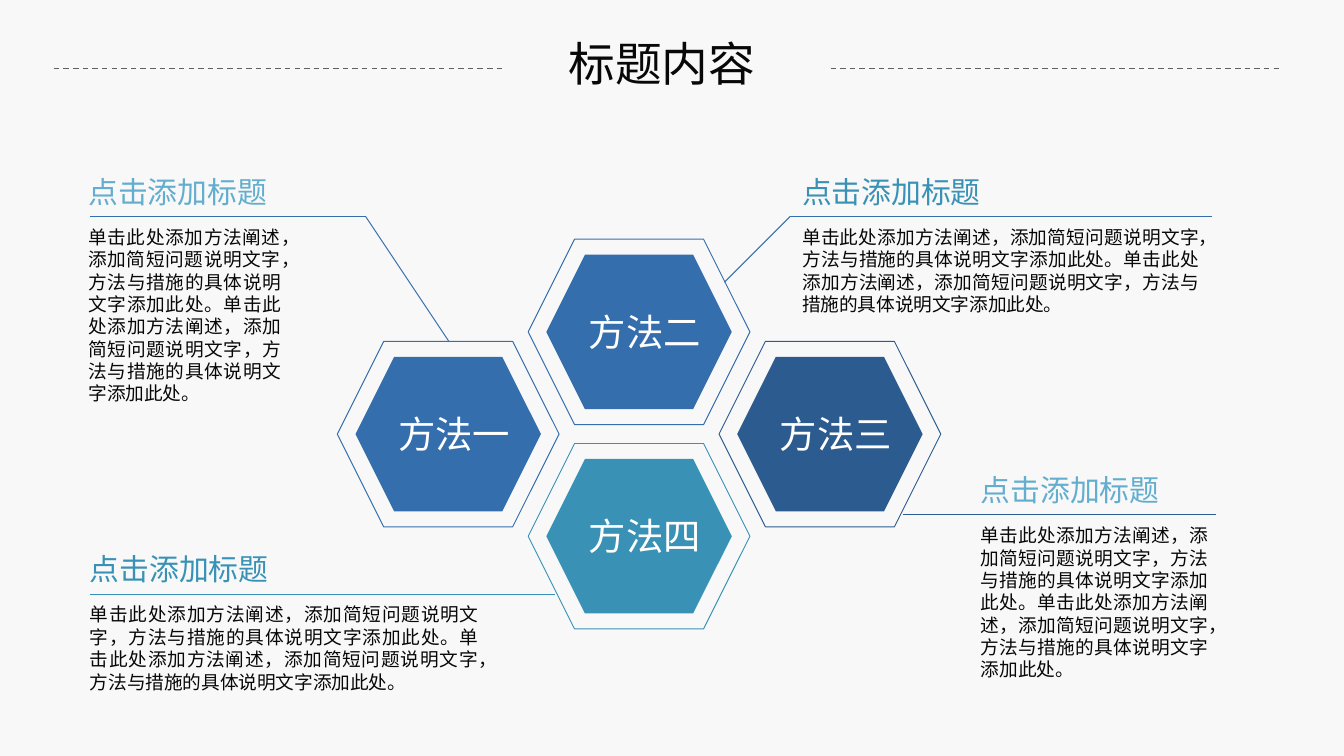
import pptx
import pptx.util
import pptx.dml.color
import pptx.enum.dml
import pptx.enum.shapes
import pptx.enum.text
import pptx.oxml
import pptx.oxml.ns

Inches, Pt = pptx.util.Inches, pptx.util.Pt
ALIGN = pptx.enum.text.PP_ALIGN
FONT = "Noto Sans CJK SC"
INK, DASH_GREY = "080808", "5F5F5F"
BLUE, NAVY, TEAL, SKY = "356EAD", "2C5B8F", "3992B5", "63AECE"


def paint(color_format, hex_color):
    """Colour a fill, a line or a font."""
    if hasattr(color_format, "solid"):
        color_format.solid()
        color_format = color_format.fore_color
    color_format.rgb = pptx.dml.color.RGBColor.from_string(hex_color)


def write(box, text, size, color, align, wrap=True):
    """Fill a box with one paragraph set on lines of 1.2 times the type size."""
    frame = box.text_frame
    frame.text = text
    frame.word_wrap = wrap
    frame.auto_size = pptx.enum.text.MSO_AUTO_SIZE.SHAPE_TO_FIT_TEXT
    frame.vertical_anchor = pptx.enum.text.MSO_ANCHOR.TOP
    paragraph = frame.paragraphs[0]
    paragraph.alignment = align
    paragraph.line_spacing = Pt(1.2 * size)
    font = paragraph.runs[0].font
    font.name, font.size = FONT, Pt(size)
    paint(font.color, color)
    east_asian = pptx.oxml.parse_xml(
        f'<a:ea {pptx.oxml.ns.nsdecls("a")} typeface="{FONT}"/>')
    paragraph.runs[0]._r.rPr.find(pptx.oxml.ns.qn("a:latin")).addnext(east_asian)


deck = pptx.Presentation()
deck.slide_width, deck.slide_height = Inches(10), Inches(10 * 9 / 16)
slide = deck.slides.add_slide(deck.slide_layouts[5])
paint(slide.background.fill, "F8F8F8")

heading = slide.shapes.title
heading.left, heading.top = Inches(4.06), Inches(0.21)
heading.width, heading.height = Inches(1.73), Inches(0.52)
write(heading, "标题内容", 25, INK, ALIGN.CENTER)

# Methods: a honeycomb of framed hexagons, placed by column and row
COLUMN, ROW = 1.42, 0.76
FRAME_W, FRAME_H = 1.65, 1.38
CORE_W, CORE_H = 1.38, 1.15
LABEL_W, LABEL_H = 1.04, 0.44
methods = [
    ("方法二", 1, 0, BLUE),
    ("方法一", 0, 1, BLUE),
    ("方法四", 1, 2, TEAL),
    ("方法三", 2, 1, NAVY),
]
HEXAGON = pptx.enum.shapes.MSO_SHAPE.HEXAGON
for name, column, row, color in methods:
    center_x = 2.51 + FRAME_W / 2 + column * COLUMN
    center_y = 1.78 + FRAME_H / 2 + row * ROW
    method = slide.shapes.add_group_shape().shapes
    frame, core = [
        method.add_shape(HEXAGON, Inches(center_x - w / 2), Inches(center_y - h / 2),
                         Inches(w), Inches(h))
        for w, h in ((FRAME_W, FRAME_H), (CORE_W, CORE_H))
    ]
    frame.shadow.inherit = core.shadow.inherit = False
    frame.fill.background()
    paint(frame.line.color, color)
    frame.line.width = Pt(0.5)
    paint(core.fill, color)
    core.line.fill.background()
    label = method.add_textbox(
        Inches(center_x + 0.04 - LABEL_W / 2), Inches(center_y - LABEL_H / 2),
        Inches(LABEL_W), Inches(LABEL_H))
    write(label, name, 20, "FFFFFF", ALIGN.RIGHT, wrap=False)

# Notes: a heading, a rule under it that leads to a hexagon, and a description
HEADING_W, HEADING_H, BODY_DROP = 1.87, 0.37, 0.39
SENTENCE = "单击此处添加方法阐述，添加简短问题说明文字，方法与措施的具体说明文字添加此处。"
notes = [
    # left, top, body width, body height, heading colour
    (0.56, 1.24, 1.63, 1.45, SKY),
    (5.87, 1.24, 3.15, 0.77, TEAL),
    (0.57, 4.05, 3.09, 0.77, TEAL),
    (7.20, 3.46, 1.89, 1.28, SKY),
]
for left, top, body_w, body_h, color in notes:
    note_heading = slide.shapes.add_textbox(
        Inches(left), Inches(top), Inches(HEADING_W), Inches(HEADING_H))
    write(note_heading, "点击添加标题", 16, color, ALIGN.LEFT)
    description = slide.shapes.add_textbox(
        Inches(left), Inches(top + BODY_DROP), Inches(body_w), Inches(body_h))
    write(description, SENTENCE * 2, 10, INK, ALIGN.JUSTIFY)

# Lines: the dashes beside the title, then the leaders of the notes
rules = [
    ([(6.18, 0.51), (9.52, 0.51)], DASH_GREY, 0.75),
    ([(0.40, 0.51), (3.74, 0.51)], DASH_GREY, 0.75),
    ([(0.67, 1.61), (2.72, 1.61), (3.34, 2.54)], BLUE, 0.5),
    ([(9.02, 1.61), (5.88, 1.61), (5.39, 2.10)], BLUE, 0.5),
    ([(0.67, 4.42), (4.13, 4.42)], TEAL, 0.5),
    ([(9.05, 3.83), (6.72, 3.83)], NAVY, 0.5),
]
for points, color, width in rules:
    for start, end in zip(points, points[1:]):
        rule = slide.shapes.add_connector(
            pptx.enum.shapes.MSO_CONNECTOR.STRAIGHT,
            *[Inches(value) for value in start + end])
        paint(rule.line.color, color)
        rule.line.width = Pt(width)
        if color == DASH_GREY:
            rule.line.dash_style = pptx.enum.dml.MSO_LINE.DASH
        rule._element.spPr.append(pptx.oxml.parse_xml(
            f'<a:effectLst {pptx.oxml.ns.nsdecls("a")}/>'))

deck.save("out.pptx")
